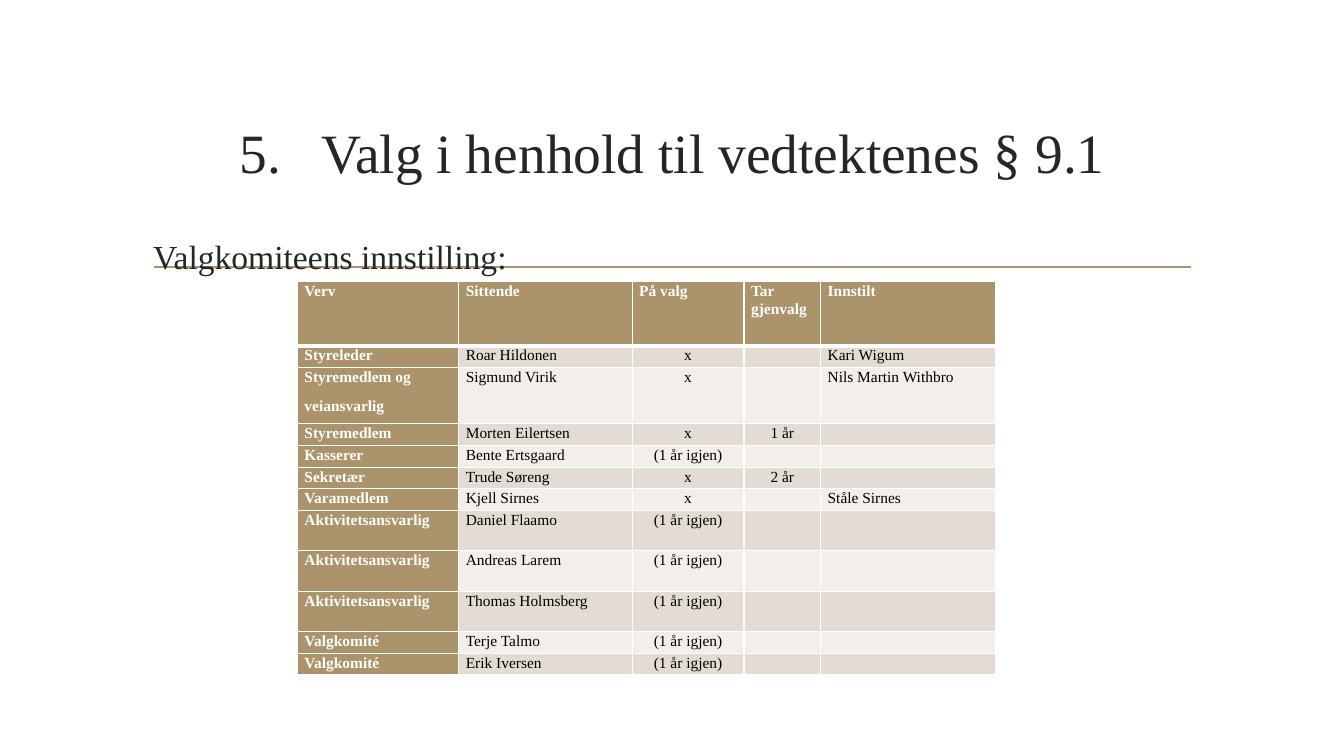
from dataclasses import dataclass

from lxml.etree import SubElement
from pptx import Presentation
from pptx.dml.color import RGBColor
from pptx.enum.text import MSO_ANCHOR, MSO_AUTO_SIZE, PP_ALIGN
from pptx.oxml.ns import qn
from pptx.util import Inches, Pt


@dataclass(frozen=True)
class Theme:
    font: str = "Times New Roman"
    ink: str = "262626"
    black: str = "000000"
    white: str = "FFFFFF"
    gold: str = "AB946B"
    bands: tuple = ("E2DCD4", "F1EEEB")
    title: float = 39.6
    lead: float = 24
    cell: float = 11


def color(code):
    return RGBColor.from_string(code)


def write(para, text, *, font, size, ink, bold=False, align=PP_ALIGN.LEFT,
          after=0, space=1.0):
    """Put formatted text in a paragraph."""
    para.alignment = align
    para.space_before, para.space_after = Pt(0), Pt(after)
    para.line_spacing = space
    if not text:
        # Keeps an empty cell as low as a filled one
        SubElement(para._p, qn("a:endParaRPr"), sz=str(int(size * 100)))
        return
    run = para.add_run()
    run.text = text
    run.font.name, run.font.size = font, Pt(size)
    run.font.bold, run.font.color.rgb = bold, color(ink)


class Page:
    def __init__(self, deck, theme):
        self.theme = theme
        self.slide = deck.slides.add_slide(deck.slide_layouts[5])

    def title(self, text, start, left, top, width, height):
        box = self.slide.shapes.title
        box.left, box.top = Inches(left), Inches(top)
        box.width, box.height = Inches(width), Inches(height)
        frame = box.text_frame
        frame.word_wrap = True
        frame.auto_size = MSO_AUTO_SIZE.NONE
        frame.vertical_anchor = MSO_ANCHOR.MIDDLE
        frame.margin_bottom = Inches(0.62)
        para = frame.paragraphs[0]
        props = para._p.get_or_add_pPr()
        props.set("marL", str(Inches(0.81)))
        props.set("indent", str(-Inches(0.81)))
        SubElement(props, qn("a:buFont"), typeface="+mj-lt")
        SubElement(props, qn("a:buAutoNum"), type="arabicPeriod",
                   startAt=str(start))
        write(para, text, font=self.theme.font, size=self.theme.title,
              ink=self.theme.ink, align=PP_ALIGN.CENTER)

    def rule(self, left, right, top):
        line = self.slide.shapes.add_connector(
            1, Inches(left), Inches(top), Inches(right), Inches(top))
        line.line.color.rgb = color(self.theme.gold)
        line.line.width = Pt(1.25)
        SubElement(line._element.spPr, qn("a:effectLst"))

    def lead(self, text, left, top, width, height):
        box = self.slide.shapes.add_textbox(
            Inches(left), Inches(top), Inches(width), Inches(height))
        frame = box.text_frame
        frame.word_wrap = True
        frame.margin_top = Inches(0.08)
        write(frame.paragraphs[0], text, font=self.theme.font,
              size=self.theme.lead, ink=self.theme.ink, after=6)

    def edges(self, cell, row):
        props = cell._tc.get_or_add_tcPr()
        thick = {0: "lnB", 1: "lnT"}.get(row)
        for side in ("lnL", "lnR", "lnT", "lnB"):
            width = Pt(3 if side == thick else 1)
            line = SubElement(props, qn(f"a:{side}"), w=str(width))
            fill = SubElement(line, qn("a:solidFill"))
            SubElement(fill, qn("a:srgbClr"), val=self.theme.white)

    def cell(self, cell, text, row, col):
        theme = self.theme
        head = row == 0 or col == 0
        cell.margin_left = cell.margin_right = Inches(0.07)
        cell.margin_top = cell.margin_bottom = 0
        self.edges(cell, row)
        cell.fill.solid()
        cell.fill.fore_color.rgb = color(
            theme.gold if head else theme.bands[(row - 1) % 2])
        mid = not head and col in (2, 3)
        frame = cell.text_frame
        for i, part in enumerate(text.split("\n")):
            para = frame.add_paragraph() if i else frame.paragraphs[0]
            write(para, part, font=theme.font, size=theme.cell, bold=head,
                  ink=theme.white if head else theme.black,
                  align=PP_ALIGN.CENTER if mid else PP_ALIGN.LEFT,
                  after=8, space=1.07)

    def table(self, rows, left, top, widths, heights):
        table = self.slide.shapes.add_table(
            len(rows), len(widths), Inches(left), Inches(top),
            Inches(sum(widths)), Inches(sum(heights))).table
        table.first_col = True
        for col, width in zip(table.columns, widths):
            col.width = Inches(width)
        for row, height in zip(table.rows, heights):
            row.height = Inches(height)
        for r, row in enumerate(rows):
            for c, text in enumerate(row):
                self.cell(table.cell(r, c), text, r, c)


LEFT = "(1 år igjen)"
ROWS = [
    ("Verv", "Sittende", "På valg", "Tar gjenvalg", "Innstilt"),
    ("Styreleder", "Roar Hildonen", "x", "", "Kari Wigum"),
    ("Styremedlem og\nveiansvarlig", "Sigmund Virik", "x", "",
     "Nils Martin Withbro"),
    ("Styremedlem", "Morten Eilertsen", "x", "1 år", ""),
    ("Kasserer", "Bente Ertsgaard", LEFT, "", ""),
    ("Sekretær", "Trude Søreng", "x", "2 år", ""),
    ("Varamedlem", "Kjell Sirnes", "x", "", "Ståle Sirnes"),
    ("Aktivitetsansvarlig", "Daniel Flaamo", LEFT, "", ""),
    ("Aktivitetsansvarlig", "Andreas Larem", LEFT, "", ""),
    ("Aktivitetsansvarlig", "Thomas Holmsberg", LEFT, "", ""),
    ("Valgkomité", "Terje Talmo", LEFT, "", ""),
    ("Valgkomité", "Erik Iversen", LEFT, "", ""),
]


def main():
    deck = Presentation()
    deck.slide_width, deck.slide_height = Inches(13.33), Inches(7.5)
    page = Page(deck, Theme())

    # Heading and lead text
    page.rule(1.53, 11.81, 2.65)
    page.title("Valg i henhold til vedtektenes § 9.1", 5,
               1.42, 1.07, 10.5, 1.43)
    page.lead("Valgkomiteens innstilling:", 1.42, 2.26, 10.5, 4.17)

    # Table of posts
    low, tall = 0.215, 0.4
    page.table(ROWS, 2.95, 2.79, (1.6, 1.72, 1.11, 0.76, 1.74),
               [0.64, low, 0.56] + [low] * 4 + [tall] * 3 + [low] * 2)
    deck.save("out.pptx")


if __name__ == "__main__":
    main()
